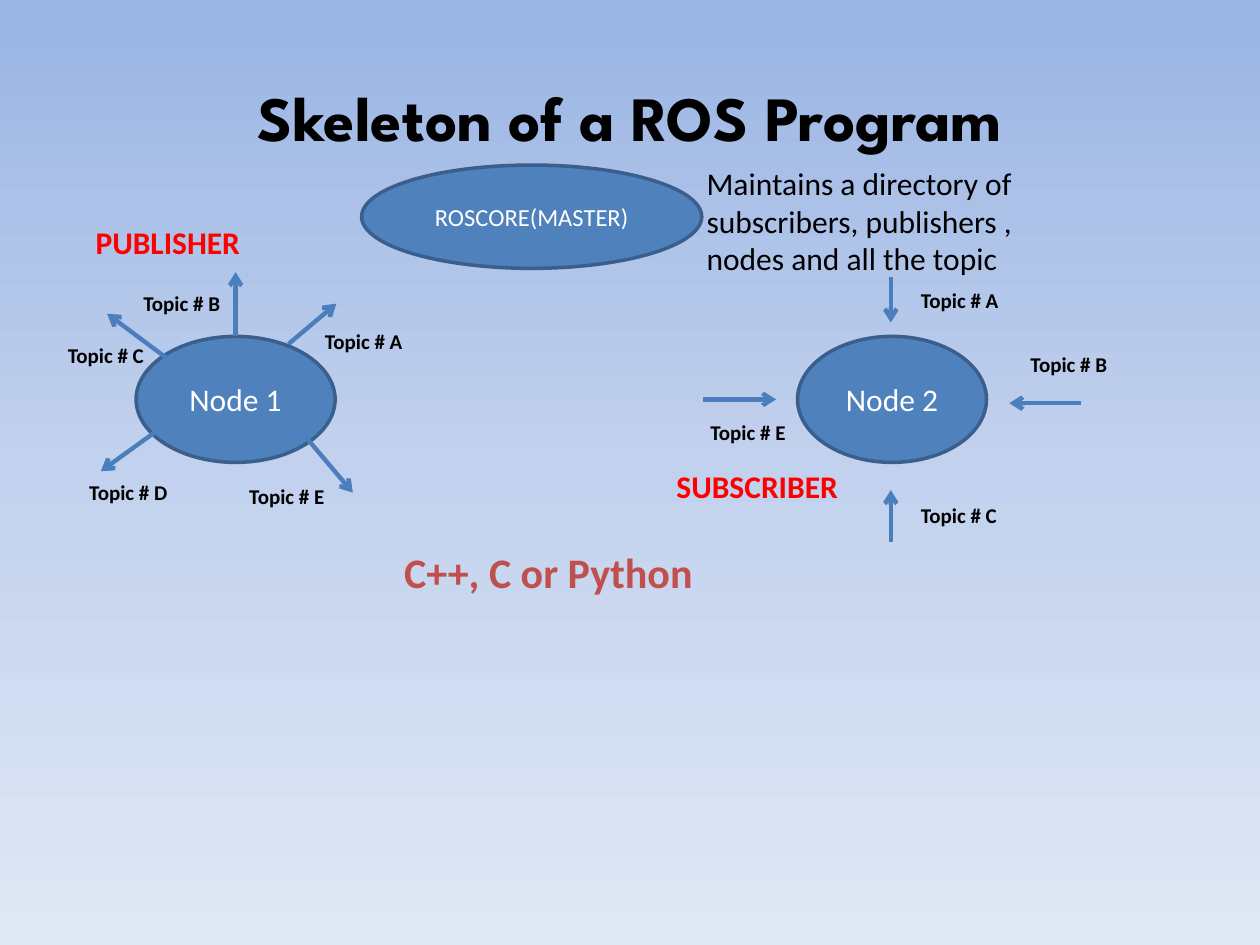
import copy
from dataclasses import dataclass

import pptx
import pptx.dml.color
import pptx.enum.shapes
import pptx.enum.text
import pptx.oxml.ns
import pptx.util
from pptx.util import Inches


@dataclass(frozen=True)
class Theme:
    font: str = "Calibri"
    title_font: str = "League Spartan"
    black: str = "000000"
    white: str = "FFFFFF"
    red: str = "FF0000"
    brick: str = "C0504D"
    node_fill: str = "4F81BD"
    node_line: str = "3A5F8C"
    arrow: str = "4B7EBC"
    background: tuple = ((0, "9AB5E4"), (0.5, "C2D1ED"), (1, "E1E8F5"))
    title_size: int = 36
    language_size: int = 24
    body_size: int = 18
    master_size: int = 14
    topic_size: int = 12


THEME = Theme()
TOPIC_SIZE = (1.24, 0.3)
ROLE_SIZE = (1.98, 0.4)

PUBLISHER_TOPICS = {
    "A": (2.48, 2.56), "B": (1.04, 2.26), "C": (0.44, 2.67),
    "D": (0.61, 3.76), "E": (1.88, 3.79),
}
SUBSCRIBER_TOPICS = {
    "A": (7.21, 2.23), "B": (8.08, 2.74), "C": (7.21, 3.94), "E": (5.54, 3.28),
}
PUBLISHER_ARROWS = [
    ((2.29, 2.73), (2.67, 2.41)),
    ((1.32, 2.84), (0.85, 2.49)),
    ((1.23, 3.43), (0.8, 3.74)),
    ((2.42, 3.46), (2.8, 3.91)),
]
SUBSCRIBER_ARROWS = [
    ((7.07, 2.2), (7.07, 2.56)),
    ((8.58, 3.2), (8.01, 3.2)),
    ((7.07, 4.3), (7.07, 3.89)),
    ((5.58, 3.17), (6.16, 3.17)),
]


def rgb(value):
    return pptx.dml.color.RGBColor.from_string(value)


def paint_background(page):
    """Fill the page with a gradient that runs from top to bottom."""
    fill = page.background.fill
    fill.gradient()
    fill.gradient_angle = 270
    stop_list = next(page.element.iter(pptx.oxml.ns.qn("a:gsLst")))
    stop_list.insert(1, copy.deepcopy(stop_list[0]))
    for stop, (position, color) in zip(fill.gradient_stops, THEME.background):
        stop.position = position
        stop.color.rgb = rgb(color)


def write(shape, text, size, color, bold=False, font=THEME.font, centred=False):
    frame = shape.text_frame
    frame.word_wrap = True
    para = frame.paragraphs[0]
    if centred:
        para.alignment = pptx.enum.text.PP_ALIGN.CENTER
        frame.vertical_anchor = pptx.enum.text.MSO_ANCHOR.MIDDLE
    span = para.add_run()
    span.text = text
    span.font.name = font
    span.font.size = pptx.util.Pt(size)
    span.font.bold = bold
    span.font.color.rgb = rgb(color)


def set_title(page, text):
    title = page.shapes.title
    title.left, title.top = Inches(0.5), Inches(0.3)
    title.width, title.height = Inches(9), Inches(1.25)
    write(title, text, THEME.title_size, THEME.black, True, THEME.title_font, True)


def add_label(page, text, place, extent, size, color=THEME.black, bold=True):
    box = page.shapes.add_textbox(*map(Inches, (*place, *extent)))
    write(box, text, size, color, bold)
    box.text_frame.auto_size = pptx.enum.text.MSO_AUTO_SIZE.SHAPE_TO_FIT_TEXT


def add_node(page, text, place, extent, size=THEME.body_size):
    node = page.shapes.add_shape(
        pptx.enum.shapes.MSO_SHAPE.OVAL, *map(Inches, (*place, *extent)))
    node.shadow.inherit = False
    node.fill.solid()
    node.fill.fore_color.rgb = rgb(THEME.node_fill)
    node.line.color.rgb = rgb(THEME.node_line)
    node.line.width = pptx.util.Pt(2)
    write(node, text, size, THEME.white, centred=True)
    return node


def add_arrow(page, start, end):
    arrow = page.shapes.add_connector(
        pptx.enum.shapes.MSO_CONNECTOR.STRAIGHT, *map(Inches, (*start, *end)))
    arrow.line.color.rgb = rgb(THEME.arrow)
    arrow.line.width = pptx.util.Pt(2.5)
    properties = arrow.element.spPr
    line = properties.find(pptx.oxml.ns.qn("a:ln"))
    line.append(pptx.oxml.parse_xml(
        f'<a:tailEnd {pptx.oxml.ns.nsdecls("a")} type="arrow"/>'))
    properties.append(pptx.oxml.parse_xml(
        f'<a:effectLst {pptx.oxml.ns.nsdecls("a")}/>'))
    return arrow


def main():
    deck = pptx.Presentation()
    deck.slide_width, deck.slide_height = Inches(10), Inches(7.5)
    page = deck.slides.add_slide(deck.slide_layouts.get_by_name("Title Only"))
    paint_background(page)
    set_title(page, "Skeleton of a ROS Program")

    publisher = add_node(page, "Node 1", (1.08, 2.67), (1.58, 1))
    add_node(page, "Node 2", (6.33, 2.67), (1.5, 1))
    add_node(page, "ROSCORE(MASTER)", (2.87, 1.31), (2.7, 0.82), THEME.master_size)

    upward = add_arrow(page, (1.87, 2.67), (1.87, 2.16))
    upward.begin_connect(publisher, 0)
    for start, end in PUBLISHER_ARROWS + SUBSCRIBER_ARROWS:
        add_arrow(page, start, end)

    for topics in (PUBLISHER_TOPICS, SUBSCRIBER_TOPICS):
        for letter, place in topics.items():
            add_label(page, f"Topic # {letter}", place, TOPIC_SIZE, THEME.topic_size)

    add_label(page, "C++, C or Python", (3.11, 4.29), (2.74, 0.5),
              THEME.language_size, THEME.brick)
    add_label(page, "Maintains a directory of subscribers, publishers , "
              "nodes and all the topic", (5.51, 1.25), (3.06, 1.01),
              THEME.body_size, bold=False)
    for role, place in (("PUBLISHER", (0.66, 1.72)), ("SUBSCRIBER", (5.27, 3.66))):
        add_label(page, role, place, ROLE_SIZE, THEME.body_size, THEME.red)

    deck.save("out.pptx")


if __name__ == "__main__":
    main()
